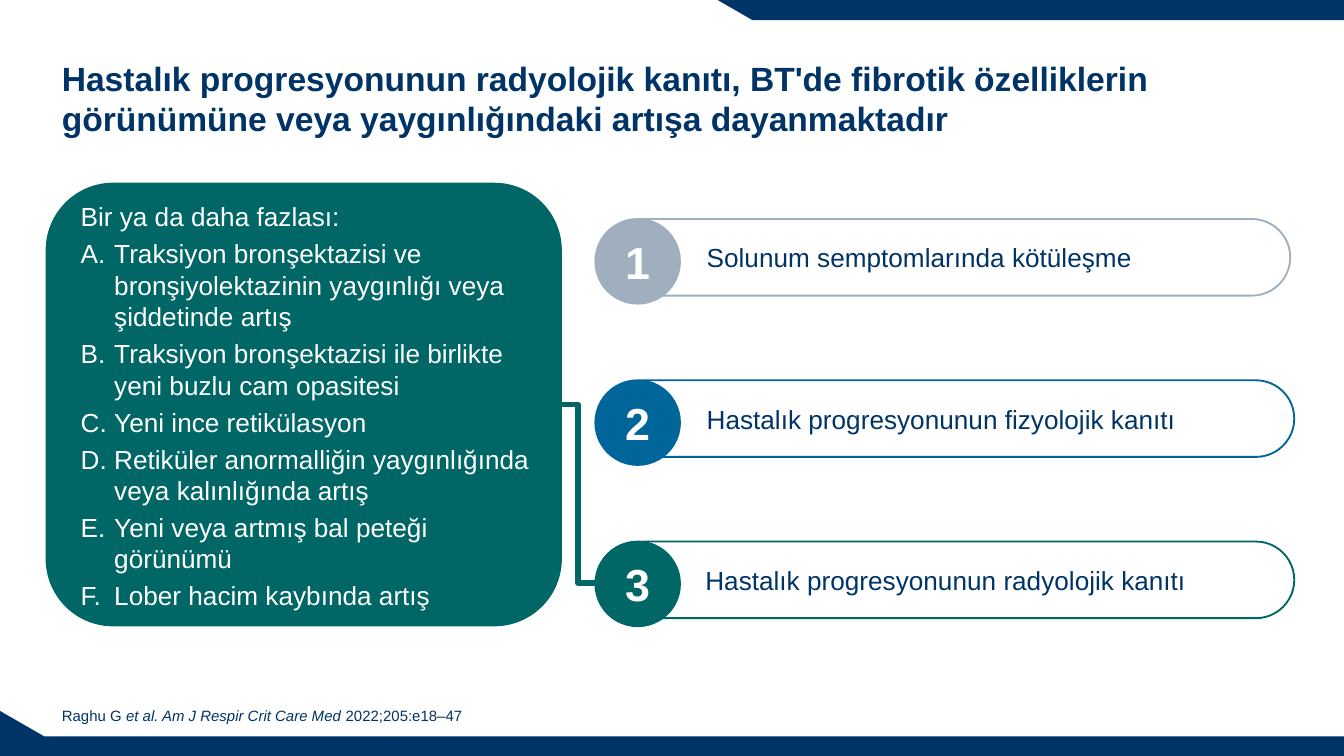
import pptx
import pptx.util
import pptx.dml.color
import pptx.enum.shapes
import pptx.enum.text
from lxml import etree
from pptx.oxml.ns import qn

Inches = pptx.util.Inches
Pt = pptx.util.Pt
SHAPE = pptx.enum.shapes.MSO_SHAPE
ALIGN = pptx.enum.text.PP_ALIGN
ANCHOR = pptx.enum.text.MSO_ANCHOR

COLORS = {"navy": "003366", "green": "006666", "blue": "006699",
          "grey": "A0AFBD", "white": "FFFFFF"}
RGB = {name: pptx.dml.color.RGBColor.from_string(value) for name, value in COLORS.items()}


def paint(shape, fill, line, width):
    """Give a shape a flat fill and outline without shadow."""
    shape.shadow.inherit = False
    shape.fill.solid()
    shape.fill.fore_color.rgb = RGB[fill]
    shape.line.color.rgb = RGB[line]
    shape.line.width = Pt(width)


def write(para, text, color, **font):
    """Add a run in Arial with the given font values."""
    span = para.add_run()
    span.text = text
    span.font.color.rgb = RGB[color]
    for name, value in {"name": "Arial", **font}.items():
        setattr(span.font, name, value)


deck = pptx.Presentation()
deck.slide_width = Inches(10)
deck.slide_height = deck.slide_width * 9 // 16
page = deck.slides.add_slide(deck.slide_layouts[1])
shapes = page.shapes

# Corner bands
bands = [
    [(5.34, 0), (10, 0), (10, 0.15), (5.6, 0.15)],
    [(0, 5.29), (0.33, 5.48), (10, 5.48), (10, 5.63), (0, 5.63)],
]
for points in bands:
    corners = [(Inches(x), Inches(y)) for x, y in points]
    builder = shapes.build_freeform(*corners[0])
    builder.add_line_segments(corners[1:], close=True)
    band = builder.convert_to_shape()
    paint(band, "navy", "navy", 1)
    band.line.fill.background()

# Title and reference
title, reference = shapes.title, page.placeholders[1]
for holder, area in ((title, (0.36, 0.3, 9.27, 0.78)), (reference, (0.36, 5.14, 8.71, 0.3))):
    holder.left, holder.top, holder.width, holder.height = map(Inches, area)
    frame = holder.text_frame
    frame.vertical_anchor = ANCHOR.BOTTOM
    frame.word_wrap = True
    frame.auto_size = pptx.enum.text.MSO_AUTO_SIZE.NONE
    frame.paragraphs[0].alignment = ALIGN.LEFT

write(title.text_frame.paragraphs[0],
      "Hastalık progresyonunun radyolojik kanıtı, BT'de fibrotik özelliklerin "
      "görünümüne veya yaygınlığındaki artışa dayanmaktadır", "navy", size=Pt(18), bold=True)

para = reference.text_frame.paragraphs[0]
para.space_before = para.space_after = Pt(3)
properties = para._p.get_or_add_pPr()
properties.set("marL", "0")
properties.set("indent", "0")
etree.SubElement(properties, qn("a:buNone"))
for text, italic in (("Raghu G ", False), ("et al. Am J Respir Crit Care Med ", True),
                     ("2022;205:e18–47", False)):
    write(para, text, "navy", size=Pt(8), italic=italic)

# Link from the criteria panel to the third item
link = shapes.add_connector(pptx.enum.shapes.MSO_CONNECTOR.ELBOW,
                            Inches(4.17), Inches(3.01), Inches(4.43), Inches(4.34))
link.line.color.rgb = RGB["green"]
link.line.width = Pt(3)
etree.SubElement(link._element.spPr, qn("a:effectLst"))

# Criteria panel
panel = shapes.add_shape(SHAPE.ROUNDED_RECTANGLE, Inches(0.35), Inches(1.37),
                         Inches(3.82), Inches(3.28))
panel.adjustments[0] = 0.15
paint(panel, "green", "green", 1.5)
link.begin_connect(panel, 3)

criteria = [
    "Traksiyon bronşektazisi ve bronşiyolektazinin yaygınlığı veya şiddetinde artış",
    "Traksiyon bronşektazisi ile birlikte yeni buzlu cam opasitesi",
    "Yeni ince retikülasyon",
    "Retiküler anormalliğin yaygınlığında veya kalınlığında artış",
    "Yeni veya artmış bal peteği görünümü",
    "Lober hacim kaybında artış",
]
box = shapes.add_textbox(Inches(0.48), Inches(1.31), Inches(3.59), Inches(3.42))
frame = box.text_frame
frame.word_wrap = True
frame.vertical_anchor = ANCHOR.MIDDLE
frame.margin_left = frame.margin_right = Inches(0.12)
para = frame.paragraphs[0]
para.space_after = Pt(3)
write(para, "Bir ya da daha fazlası:", "white", size=Pt(14))
for criterion in criteria:
    para = frame.add_paragraph()
    para.space_after = Pt(3)
    properties = para._p.get_or_add_pPr()
    properties.set("marL", str(Inches(0.25)))
    properties.set("indent", str(Inches(-0.25)))
    etree.SubElement(properties, qn("a:buFont"), typeface="+mj-lt")
    etree.SubElement(properties, qn("a:buAutoNum"), type="alphaUcPeriod")
    write(para, criterion, "white", size=Pt(14))

# Numbered items
items = [
    ("Solunum semptomlarında kötüleşme", "grey", 4.49, 5.16),
    ("Hastalık progresyonunun fizyolojik kanıtı", "blue", 4.52, 5.16),
    ("Hastalık progresyonunun radyolojik kanıtı", "green", 4.52, 5.15),
]
for index, (text, color, pill_left, text_left) in enumerate(items):
    top = 1.63 + 1.2 * index
    pill = shapes.add_shape(SHAPE.ROUNDED_RECTANGLE, Inches(pill_left), Inches(top),
                            Inches(5.11), Inches(0.57))
    pill.adjustments[0] = 0.5
    paint(pill, "white", color, 1)

    circle = shapes.add_shape(SHAPE.OVAL, Inches(4.43), Inches(top), Inches(0.63), Inches(0.63))
    paint(circle, color, color, 1)
    circle.text_frame.vertical_anchor = ANCHOR.MIDDLE
    para = circle.text_frame.paragraphs[0]
    para.alignment = ALIGN.CENTER
    write(para, str(index + 1), "white", size=Pt(24), bold=True)

    label = shapes.add_textbox(Inches(text_left), Inches(top + 0.12), Inches(4.44), Inches(0.34))
    label.text_frame.word_wrap = True
    para = label.text_frame.paragraphs[0]
    para.space_before = para.space_after = Pt(3)
    write(para, text, "navy", size=Pt(14))

deck.save("out.pptx")
